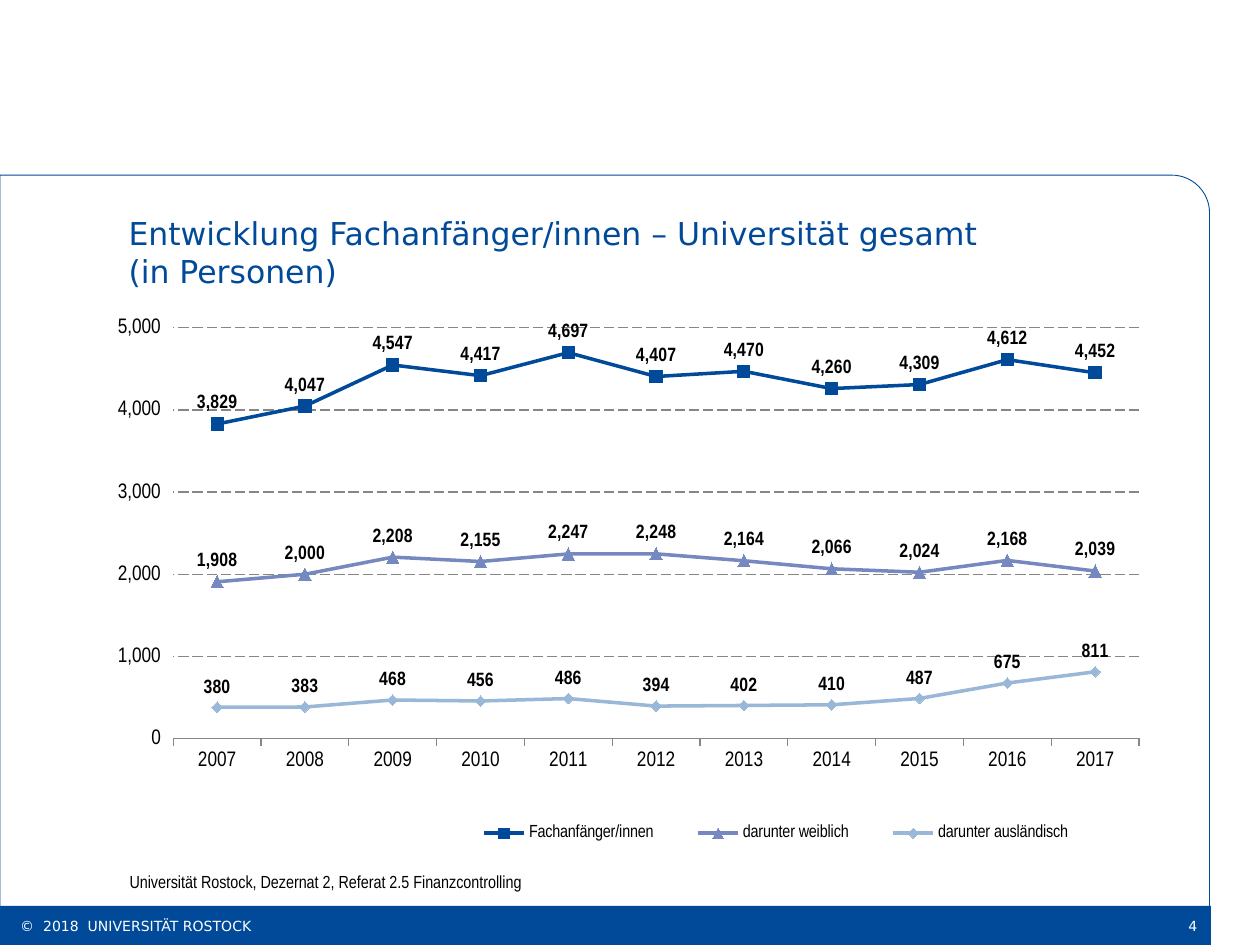
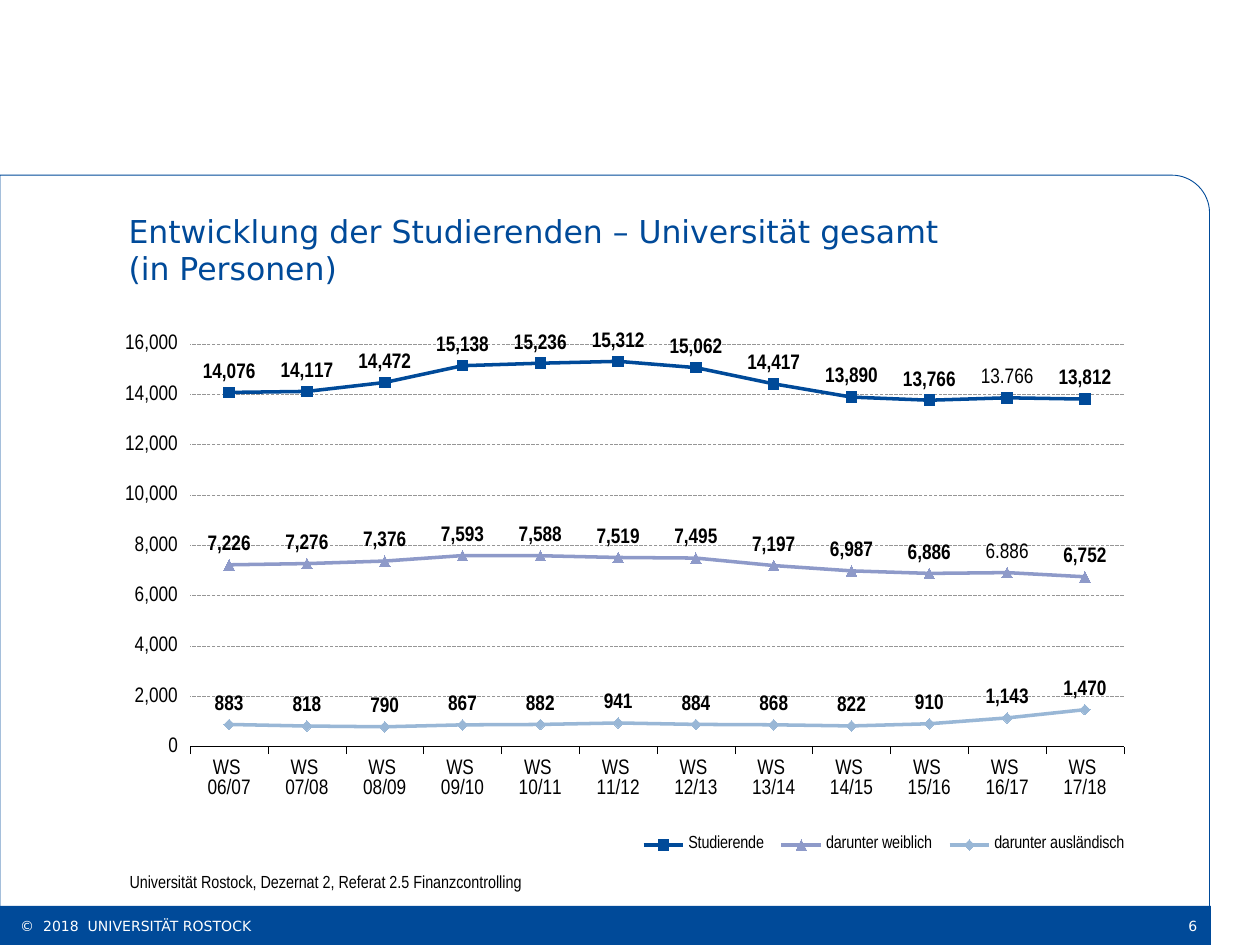
from math import cos, pi, sin

from lxml import etree
from pptx import Presentation
from pptx.chart.data import CategoryChartData
from pptx.dml.color import RGBColor
from pptx.enum.chart import (XL_CHART_TYPE, XL_LABEL_POSITION, XL_LEGEND_POSITION,
                             XL_MARKER_STYLE, XL_TICK_MARK)
from pptx.enum.dml import MSO_LINE
from pptx.enum.shapes import MSO_SHAPE
from pptx.enum.text import MSO_ANCHOR, PP_ALIGN
from pptx.oxml.ns import qn
from pptx.util import Inches, Pt

BLUE, WHITE, BLACK = "004A99", "FFFFFF", "000000"
VIOLET, LILAC, SKY = "7588BF", "8E9AC9", "99B7D6"
SANS, NARROW = "DejaVu Sans", "Arial Narrow"
MARKERS = (XL_MARKER_STYLE.SQUARE, XL_MARKER_STYLE.TRIANGLE, XL_MARKER_STYLE.DIAMOND)
FRAME_BOX = (0, 1.39, 9.6, 5.81)
BAND_BOX = (0, 7.19, 9.61, 0.31)
CORNER = 0.3

SLIDES = [
    {
        "title": "Entwicklung Fachanfänger/innen – Universität gesamt\v(in Personen)",
        "title_box": (1.02, 1.49, 8.29, 1.02),
        "page": "4",
        "chart_box": (0.74, 2.44, 8.47, 4.37),
        "plot": (0.075, 0.037, 0.905, 0.746),
        "legend": (0.33, 0.92, 0.62, 0.07),
        "categories": [str(year) for year in range(2007, 2018)],
        "scale": {"minimum_scale": 0, "maximum_scale": 5000, "major_unit": 1000},
        "axis_line": ("868686", 0.75),
        "grid_line": ("868686", 0.75),
        "label_size": 11,
        "marker_sizes": (7, 7, 6),
        "custom_labels": {},
        "series": [
            ("Fachanfänger/innen", BLUE, BLUE,
             (3829, 4047, 4547, 4417, 4697, 4407, 4470, 4260, 4309, 4612, 4452)),
            ("darunter weiblich", VIOLET, VIOLET,
             (1908, 2000, 2208, 2155, 2247, 2248, 2164, 2066, 2024, 2168, 2039)),
            ("darunter ausländisch", SKY, SKY,
             (380, 383, 468, 456, 486, 394, 402, 410, 487, 675, 811)),
        ],
    },
    {
        "title": "Entwicklung der Studierenden – Universität gesamt\v(in Personen)",
        "title_box": (1.02, 1.61, 8.7, 0.74),
        "page": "6",
        "chart_box": (0.93, 2.48, 8.17, 4.38),
        "plot": (0.071, 0.055, 0.907, 0.732),
        "legend": (0.5, 0.93, 0.49, 0.07),
        "categories": [f"WS \n{year:02}/{year + 1:02}" for year in range(6, 18)],
        "scale": {"minimum_scale": 0, "maximum_scale": 16050, "major_unit": 2000},
        "axis_line": (BLACK, 0.25),
        "grid_line": ("969696", 0.25),
        "label_size": 12,
        "marker_sizes": (6, 6, 6),
        "custom_labels": {(0, 10): "13.766", (1, 10): "6.886"},
        "series": [
            ("Studierende", BLUE, BLUE,
             (14076, 14117, 14472, 15138, 15236, 15312, 15062, 14417, 13890, 13766, 13864, 13812)),
            ("darunter weiblich", LILAC, VIOLET,
             (7226, 7276, 7376, 7593, 7588, 7519, 7495, 7197, 6987, 6886, 6917, 6752)),
            ("darunter ausländisch", SKY, SKY,
             (883, 818, 790, 867, 882, 941, 884, 868, 822, 910, 1143, 1470)),
        ],
    },
]


def rgb(value):
    """Turn a hex string into a colour."""
    return RGBColor.from_string(value)


def inches(box):
    """Convert a box of numbers to lengths."""
    return [Inches(v) for v in box]


def apply(target, values):
    """Set every attribute in a dict."""
    for name, value in values.items():
        setattr(target, name, value)


def set_font(font, size, color, name, bold=False):
    """Format a font."""
    apply(font, {"size": Pt(size), "name": name, "bold": bold})
    font.color.rgb = rgb(color)


def set_line(line, color, width, dash=None):
    """Format a line."""
    line.color.rgb = rgb(color)
    line.width = Pt(width)
    if dash:
        line.dash_style = dash


def write(sp, text, size, color, font, left=0.1, align=PP_ALIGN.LEFT):
    """Fill a text shape with one formatted paragraph."""
    tf = sp.text_frame
    apply(tf, {"word_wrap": True, "vertical_anchor": MSO_ANCHOR.MIDDLE,
               "margin_left": Inches(left), "margin_right": Inches(0.1),
               "margin_top": Inches(0.05), "margin_bottom": Inches(0.05)})
    tf.text = text
    p = tf.paragraphs[0]
    p.alignment = align
    for r in p.runs:
        set_font(r.font, size, color, font)


def add_title(s, text, box):
    """Place and format the title placeholder."""
    sp = s.shapes.title
    apply(sp, dict(zip(("left", "top", "width", "height"), inches(box))))
    write(sp, text, 18, BLUE, SANS, left=0)


def add_frame(s, box):
    """Draw the content outline with its rounded upper right corner."""
    x, y, w, h = box
    right, bottom = x + w, y + h
    angles = [step * pi / 32 for step in range(17)]
    arc = [(right - CORNER * (1 - sin(a)), y + CORNER * (1 - cos(a))) for a in angles]
    points = arc + [(right, bottom), (x, bottom)]
    outline = s.shapes.build_freeform(Inches(x), Inches(y))
    outline.add_line_segments([inches(point) for point in points], close=True)
    sp = outline.convert_to_shape()
    sp.shadow.inherit = False
    sp.fill.background()
    set_line(sp.line, BLUE, 0.5)


def add_footer(s, box, page):
    """Draw the footer band with source, copyright and page number."""
    x, y, w, h = box
    sp = s.shapes.add_shape(MSO_SHAPE.RECTANGLE, *inches(box))
    sp.shadow.inherit = False
    sp.fill.solid()
    sp.fill.fore_color.rgb = rgb(BLUE)
    sp.line.fill.background()
    texts = [
        ((x + 0.93, y - 0.33, 3.64, 0.27),
         ("Universität Rostock, Dezernat 2, Referat 2.5 Finanzcontrolling", 10, BLACK, NARROW)),
        ((x + 0.16, y, 8.48, h), ("©  2018  UNIVERSITÄT ROSTOCK", 8, WHITE, SANS, 0)),
        ((x + w - 0.78, y, 0.77, h), (page, 8, WHITE, SANS, 0.1, PP_ALIGN.RIGHT)),
    ]
    for text_box, content in texts:
        write(s.shapes.add_textbox(*inches(text_box)), *content)


def set_layout(parent, index, box, inner=False):
    """Give a chart part a fixed place as fractions of the chart."""
    for old in parent.findall(qn("c:layout")):
        parent.remove(old)
    layout = etree.Element(qn("c:layout"))
    manual = etree.SubElement(layout, qn("c:manualLayout"))
    values = [("layoutTarget", "inner")] if inner else []
    values += [("xMode", "edge"), ("yMode", "edge"), *zip("xywh", box)]
    for tag, value in values:
        etree.SubElement(manual, qn(f"c:{tag}")).set("val", str(value))
    parent.insert(index, layout)


def format_axes(chart, data):
    """Format both axes and the gridlines."""
    for axis in (chart.category_axis, chart.value_axis):
        axis.major_tick_mark = XL_TICK_MARK.OUTSIDE
        set_font(axis.tick_labels.font, 12, BLACK, NARROW)
    set_line(chart.category_axis.format.line, *data["axis_line"])
    axis = chart.value_axis
    apply(axis, data["scale"])
    apply(axis.tick_labels, {"number_format": "#,##0", "number_format_is_linked": False})
    axis.format.line.fill.background()
    set_line(axis.major_gridlines.format.line, *data["grid_line"], MSO_LINE.LONG_DASH)


def format_series(series, color, marker_color, marker, marker_size, label_size):
    """Format a line, its markers and its value labels."""
    series.smooth = False
    set_line(series.format.line, color, 2)
    apply(series.marker, {"style": marker, "size": marker_size})
    fmt = series.marker.format
    fmt.fill.solid()
    fmt.fill.fore_color.rgb = rgb(marker_color)
    set_line(fmt.line, marker_color, 0.75)
    labels = series.data_labels
    apply(labels, {"show_value": True, "position": XL_LABEL_POSITION.ABOVE,
                   "number_format": "#,##0", "number_format_is_linked": False})
    set_font(labels.font, label_size, BLACK, NARROW, True)


def add_line_chart(s, box, data):
    """Add the line chart with its legend."""
    chart_data = CategoryChartData(number_format="#,##0")
    chart_data.categories = data["categories"]
    for name, _, _, values in data["series"]:
        chart_data.add_series(name, values)
    chart = s.shapes.add_chart(XL_CHART_TYPE.LINE_MARKERS, *inches(box), chart_data).chart
    apply(chart, {"has_title": False, "has_legend": True})
    set_font(chart.font, 10, BLACK, "Arial")
    apply(chart.legend, {"position": XL_LEGEND_POSITION.BOTTOM, "include_in_layout": False})
    set_font(chart.legend.font, 10, BLACK, NARROW)
    set_layout(chart.legend._element, 1, data["legend"])
    set_layout(chart._chartSpace.find(f".//{qn('c:plotArea')}"), 0, data["plot"], inner=True)
    format_axes(chart, data)
    plot = chart.plots[0]
    plot.vary_by_categories = False
    for series, (_, color, marker_color, _), marker, size in zip(
            plot.series, data["series"], MARKERS, data["marker_sizes"]):
        format_series(series, color, marker_color, marker, size, data["label_size"])
    for (row, point), text in data["custom_labels"].items():
        label = plot.series[row].points[point].data_label
        label.text_frame.text = text
        label.position = XL_LABEL_POSITION.ABOVE
        set_font(label.text_frame.paragraphs[0].runs[0].font, data["label_size"], BLACK, NARROW)


def build_slide(prs, data):
    """Build one chart slide."""
    s = prs.slides.add_slide(prs.slide_layouts[5])
    add_frame(s, FRAME_BOX)
    add_title(s, data["title"], data["title_box"])
    add_line_chart(s, data["chart_box"], data)
    add_footer(s, BAND_BOX, data["page"])


def main():
    """Build and save the presentation."""
    prs = Presentation()
    prs.slide_width, prs.slide_height = Inches(10), Inches(7.5)
    for data in SLIDES:
        build_slide(prs, data)
    prs.save("out.pptx")


if __name__ == "__main__":
    main()
